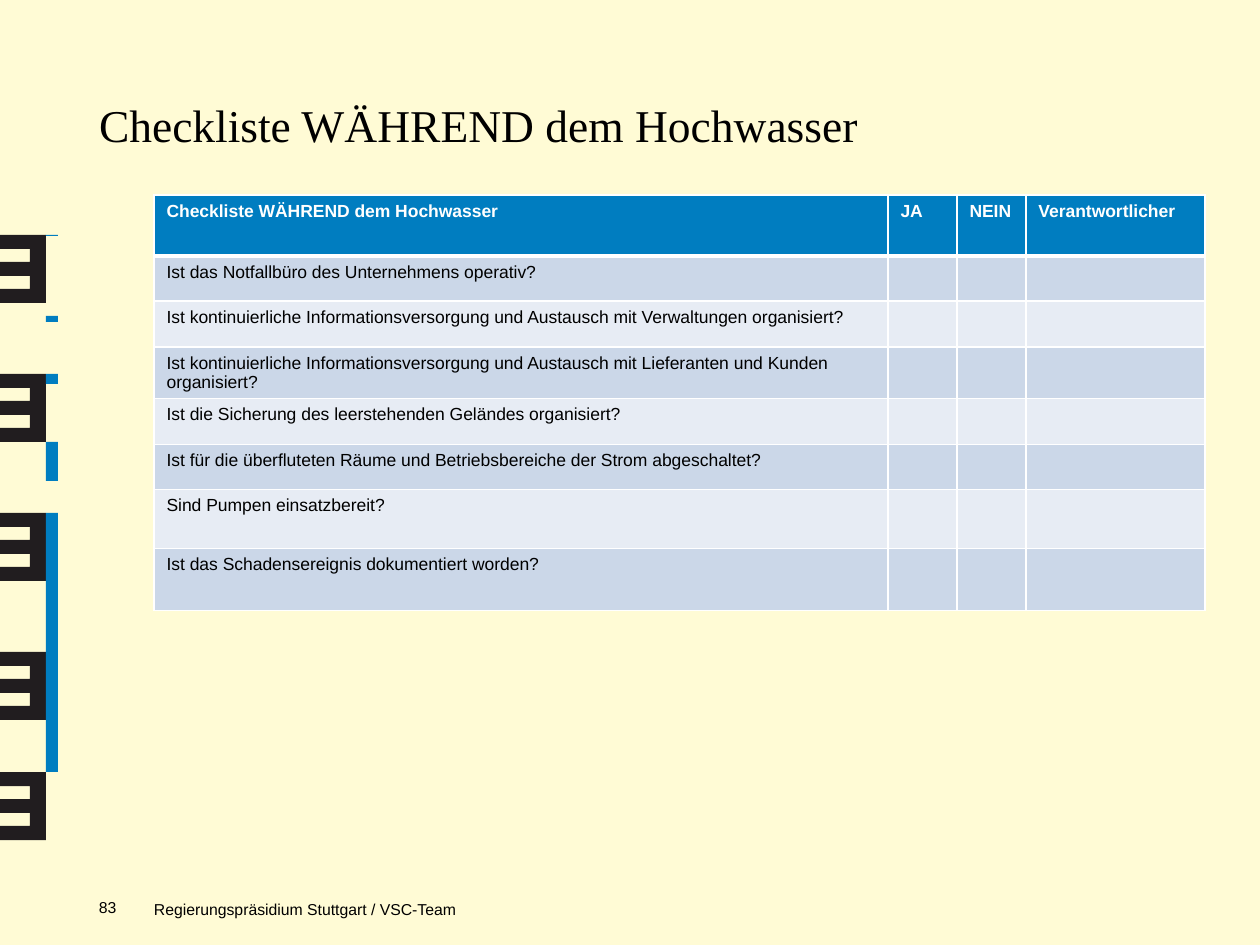
from lxml import etree
from pptx import Presentation
from pptx.dml.color import RGBColor
from pptx.enum.shapes import MSO_SHAPE
from pptx.enum.text import MSO_ANCHOR, MSO_AUTO_SIZE, PP_ALIGN
from pptx.oxml.ns import qn
from pptx.util import Pt

RECT = MSO_SHAPE.RECTANGLE
TOP, BOTTOM = MSO_ANCHOR.TOP, MSO_ANCHOR.BOTTOM
LEFT = PP_ALIGN.LEFT
NO_FIT = MSO_AUTO_SIZE.NONE

SCALE = 914400 / 126
COLORS = {
    "paper": "FFFBD5",
    "black": "000000",
    "white": "FFFFFF",
    "mark": "211D1F",
    "blue": "007DC0",
    "dark_band": "CBD7E8",
    "light_band": "E7ECF4",
}


def px(n):
    return round(n * SCALE)


def style(p, size, color, name="Arial", bold=False):
    p.alignment = LEFT
    p.font.size = Pt(size)
    p.font.name = name
    p.font.bold = bold
    p.font.color.rgb = RGBColor.from_string(COLORS[color])


prs = Presentation()
prs.slide_width, prs.slide_height = px(1260), px(945)
s = prs.slides.add_slide(prs.slide_layouts[5])
s.background.fill.solid()
s.background.fill.fore_color.rgb = RGBColor.from_string(COLORS["paper"])

marks = []
outline = [(0, 14), (30, 14), (30, 27), (0, 27), (0, 41), (30, 41),
           (30, 54), (0, 54), (0, 68), (46, 68), (46, 0)]
for top in (235, 374, 513, 652, 772):
    builder = s.shapes.build_freeform(0, top, scale=SCALE)
    builder.add_line_segments([(x, top + y) for x, y in outline], close=True)
    marks.append((builder.convert_to_shape(), "mark"))
for top, height in ((235, 1), (316, 6), (374, 10), (442, 39), (513, 259)):
    bar = s.shapes.add_shape(RECT, px(46), px(top), px(12), px(height))
    marks.append((bar, "blue"))
for sp, color in marks:
    sp.shadow.inherit = False
    sp.fill.solid()
    sp.fill.fore_color.rgb = RGBColor.from_string(COLORS[color])
    sp.line.fill.background()

title = s.shapes.title
title.left, title.top, title.width, title.height = px(99), px(91), px(1117), px(118)
tf = title.text_frame
tf.text = "Checkliste WÄHREND dem Hochwasser"
tf.auto_size = NO_FIT
tf.vertical_anchor = TOP
tf.margin_left = tf.margin_right = tf.margin_bottom = 0
tf.margin_top = px(6)
style(tf.paragraphs[0], 26, "black", "Times New Roman")

header = ["Checkliste WÄHREND dem Hochwasser", "JA", "NEIN", "Verantwortlicher"]
questions = [
    "Ist das Notfallbüro des Unternehmens operativ?",
    "Ist kontinuierliche Informationsversorgung und Austausch mit Verwaltungen organisiert?",
    "Ist kontinuierliche Informationsversorgung und Austausch mit Lieferanten und Kunden organisiert?",
    "Ist die Sicherung des leerstehenden Geländes organisiert?",
    "Ist für die überfluteten Räume und Betriebsbereiche der Strom abgeschaltet?",
    "Sind Pumpen einsatzbereit?",
    "Ist das Schadensereignis dokumentiert worden?",
]
rows = [header] + [[q, "", "", ""] for q in questions]
widths = [734, 69, 69, 179]
heights = [61, 45, 46, 51, 46, 45, 59, 62]

table = s.shapes.add_table(len(rows), len(widths), px(154), px(195),
                           px(sum(widths)), px(sum(heights))).table
for col, width in zip(table.columns, widths):
    col.width = px(width)
for row, height in zip(table.rows, heights):
    row.height = px(height)

for i, values in enumerate(rows):
    fill = "blue" if i == 0 else "dark_band" if i % 2 else "light_band"
    for j, text in enumerate(values):
        cell = table.cell(i, j)
        cell.text = text
        tcPr = cell._tc.get_or_add_tcPr()
        for side in ("L", "R", "T", "B"):
            thick = (i, side) in ((0, "B"), (1, "T"))
            ln = etree.SubElement(tcPr, qn("a:ln" + side), w=str(Pt(3 if thick else 1)))
            solid = etree.SubElement(ln, qn("a:solidFill"))
            etree.SubElement(solid, qn("a:srgbClr"), val=COLORS["white"])
        cell.fill.solid()
        cell.fill.fore_color.rgb = RGBColor.from_string(COLORS[fill])
        p = cell.text_frame.paragraphs[0]
        style(p, 10, "black" if i else "white", bold=i == 0)
        if not text:
            etree.SubElement(p._p, qn("a:endParaRPr"), sz="1000")

footers = [
    ("Regierungspräsidium Stuttgart / VSC-Team", 154, 893, 446, 26, 6, BOTTOM),
    ("83", 99, 898, 38, 35, 0, TOP),
]
for text, x, y, w, h, inset, anchor in footers:
    tf = s.shapes.add_textbox(px(x), px(y), px(w), px(h)).text_frame
    tf.text = text
    tf.word_wrap = True
    tf.vertical_anchor = anchor
    tf.margin_left = tf.margin_right = tf.margin_bottom = 0
    tf.margin_top = px(inset)
    style(tf.paragraphs[0], 9, "black")

prs.save("out.pptx")
